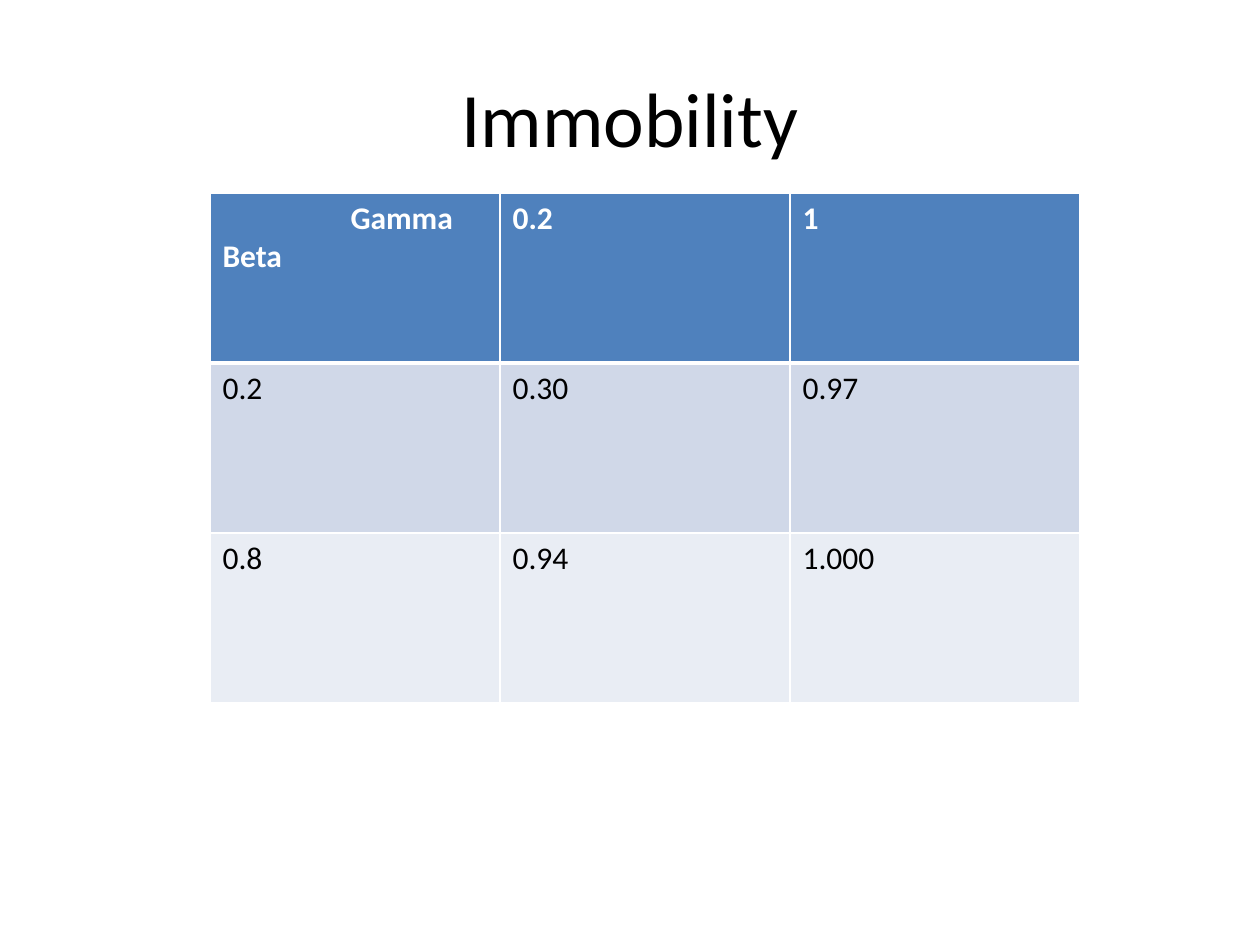
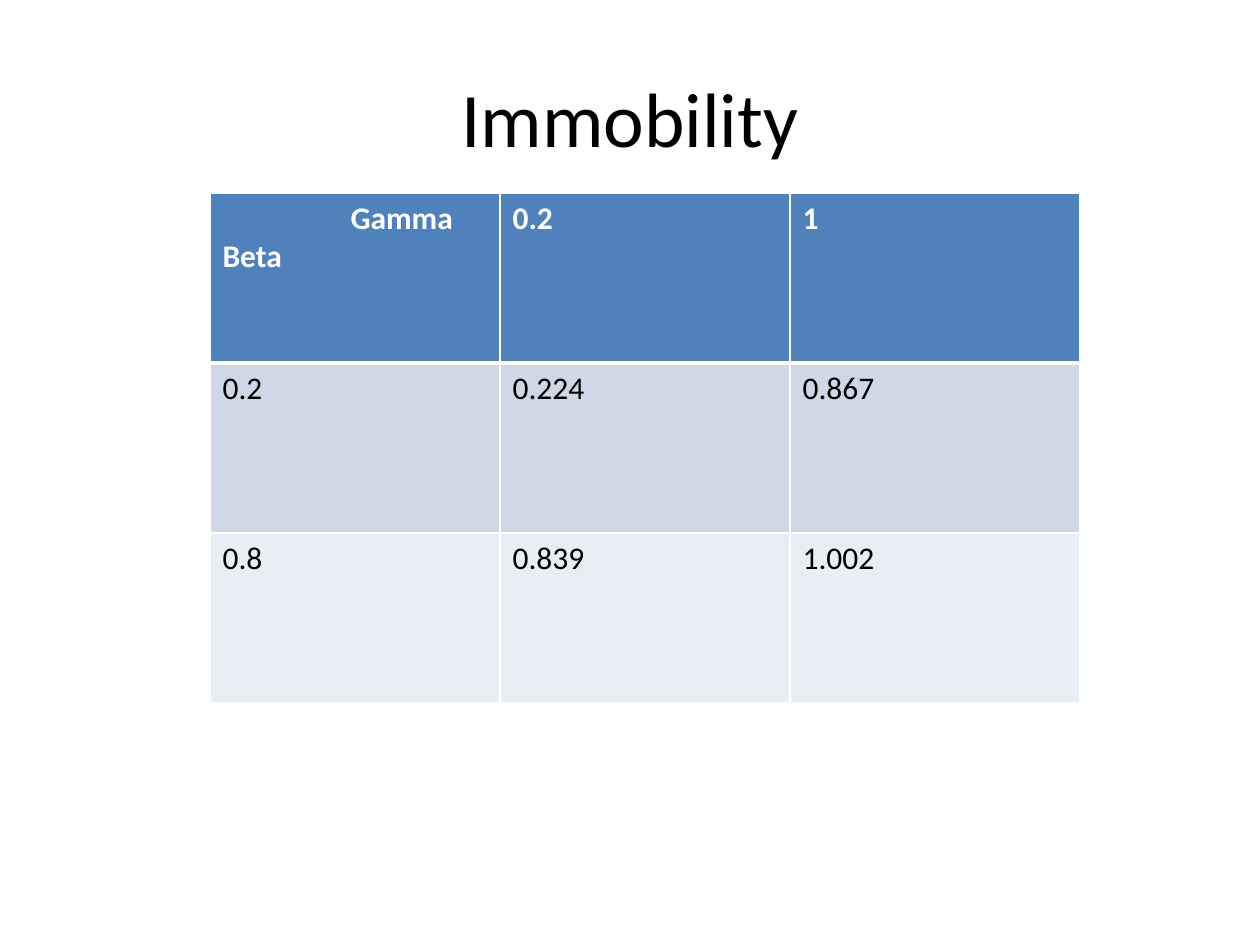
from dataclasses import dataclass

from lxml.etree import SubElement
from pptx import Presentation
from pptx.dml.color import RGBColor
from pptx.enum.text import MSO_ANCHOR, PP_ALIGN
from pptx.oxml.ns import qn
from pptx.util import Pt

TITLE = "Immobility"
GAMMAS = ["0.2", "1"]
BETAS = ["0.2", "0.8"]
RESULTS = [
    [["0.30", "0.97"], ["0.94", "1.000"]],
    [["0.224", "0.867"], ["0.839", "1.002"]],
]


@dataclass(frozen=True)
class Theme:
    font: str = "Calibri"
    title_size: int = 44
    cell_size: int = 18
    text: str = "000000"
    header_text: str = "FFFFFF"
    header_fill: str = "4F81BD"
    bands: tuple = ("D0D8E8", "E9EDF4")
    border: str = "FFFFFF"
    thin: int = 1
    thick: int = 3


THEME = Theme()
PX_PER_INCH = 126
SLIDE_SIZE = (1260, 945)
TITLE_BOX = (63, 38, 1134, 157)
TABLE_ORIGIN = (210, 193)
COLUMN_WIDTH, ROW_HEIGHT = 290, 170
GAMMA_INDENT = 128


def px(length):
    return round(length * 914400 / PX_PER_INCH)


def style_text(frame, size, color, bold=False):
    for para in frame.paragraphs:
        for span in para.runs:
            span.font.name = THEME.font
            span.font.size = Pt(size)
            span.font.bold = bold
            span.font.color.rgb = RGBColor.from_string(color)


def add_title(page):
    box = page.shapes.add_textbox(*map(px, TITLE_BOX))
    frame = box.text_frame
    frame.word_wrap = True
    frame.vertical_anchor = MSO_ANCHOR.MIDDLE
    frame.text = TITLE
    frame.paragraphs[0].alignment = PP_ALIGN.CENTER
    style_text(frame, THEME.title_size, THEME.text)


def set_borders(cell, row):
    """Draw thin cell edges, with a thick rule between header and body."""
    widths = {"L": THEME.thin, "R": THEME.thin,
              "T": THEME.thick if row == 1 else THEME.thin,
              "B": THEME.thick if row == 0 else THEME.thin}
    properties = cell._tc.get_or_add_tcPr()
    for side, width in widths.items():
        line = SubElement(properties, qn(f"a:ln{side}"), w=str(Pt(width)))
        fill = SubElement(line, qn("a:solidFill"))
        SubElement(fill, qn("a:srgbClr"), val=THEME.border)


def style_cell(cell, row):
    header = row == 0
    set_borders(cell, row)
    fill = THEME.header_fill if header else THEME.bands[(row - 1) % 2]
    cell.fill.solid()
    cell.fill.fore_color.rgb = RGBColor.from_string(fill)
    color = THEME.header_text if header else THEME.text
    style_text(cell.text_frame, THEME.cell_size, color, header)


def add_result_table(page, values):
    rows = [["Gamma\nBeta", *GAMMAS]]
    rows += [[beta, *line] for beta, line in zip(BETAS, values)]
    size = (COLUMN_WIDTH * len(rows[0]), ROW_HEIGHT * len(rows))
    table = page.shapes.add_table(
        len(rows), len(rows[0]), *map(px, TABLE_ORIGIN + size)).table
    for column in table.columns:
        column.width = px(COLUMN_WIDTH)
    for row, texts in enumerate(rows):
        table.rows[row].height = px(ROW_HEIGHT)
        for column, text in enumerate(texts):
            cell = table.cell(row, column)
            cell.text_frame.text = text
            style_cell(cell, row)
    gamma = table.cell(0, 0).text_frame.paragraphs[0]
    gamma._p.get_or_add_pPr().set("marL", str(px(GAMMA_INDENT)))


def main():
    deck = Presentation()
    deck.slide_width, deck.slide_height = map(px, SLIDE_SIZE)
    for values in RESULTS:
        page = deck.slides.add_slide(deck.slide_layouts[6])
        add_result_table(page, values)
        add_title(page)
    deck.save("out.pptx")


if __name__ == "__main__":
    main()
